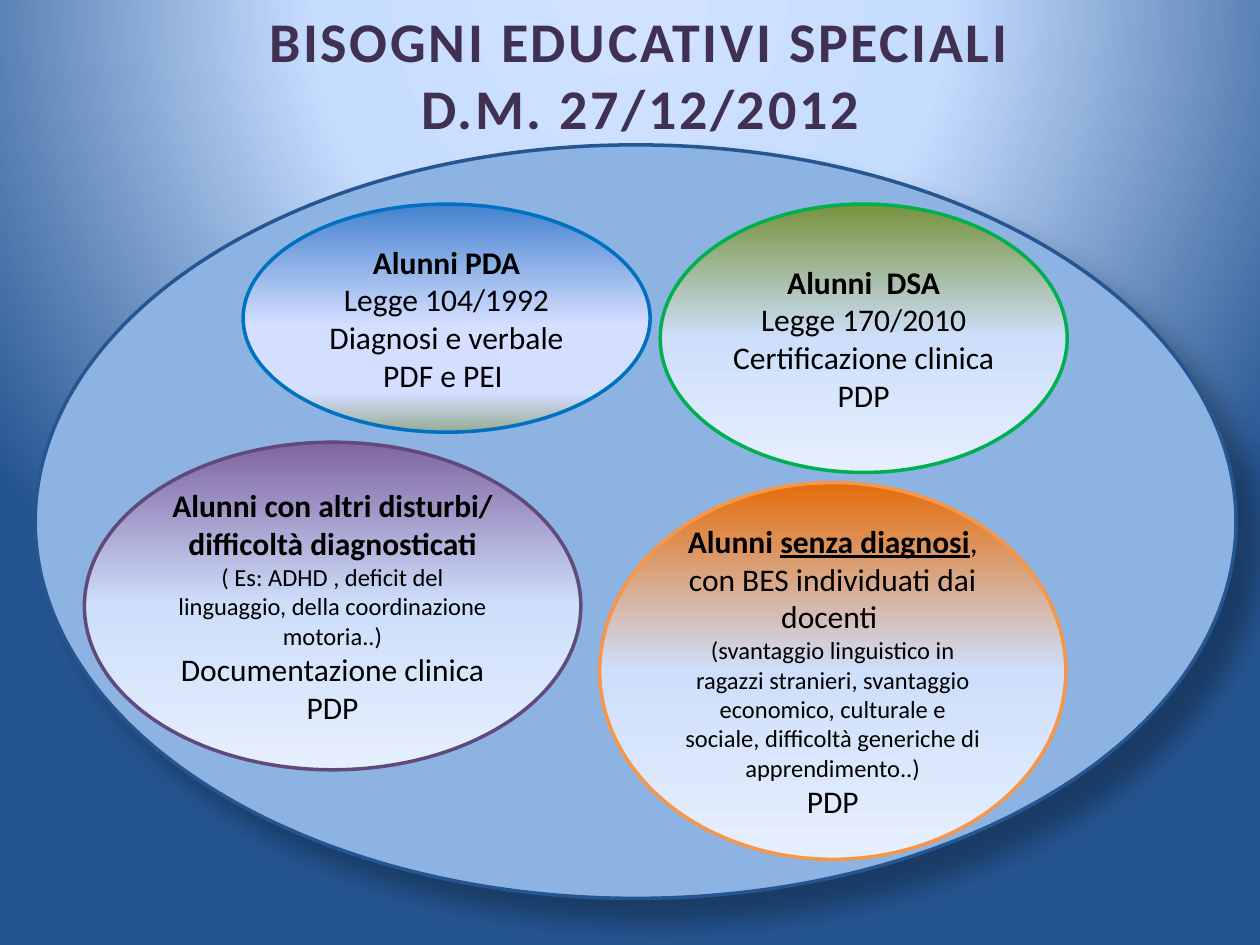
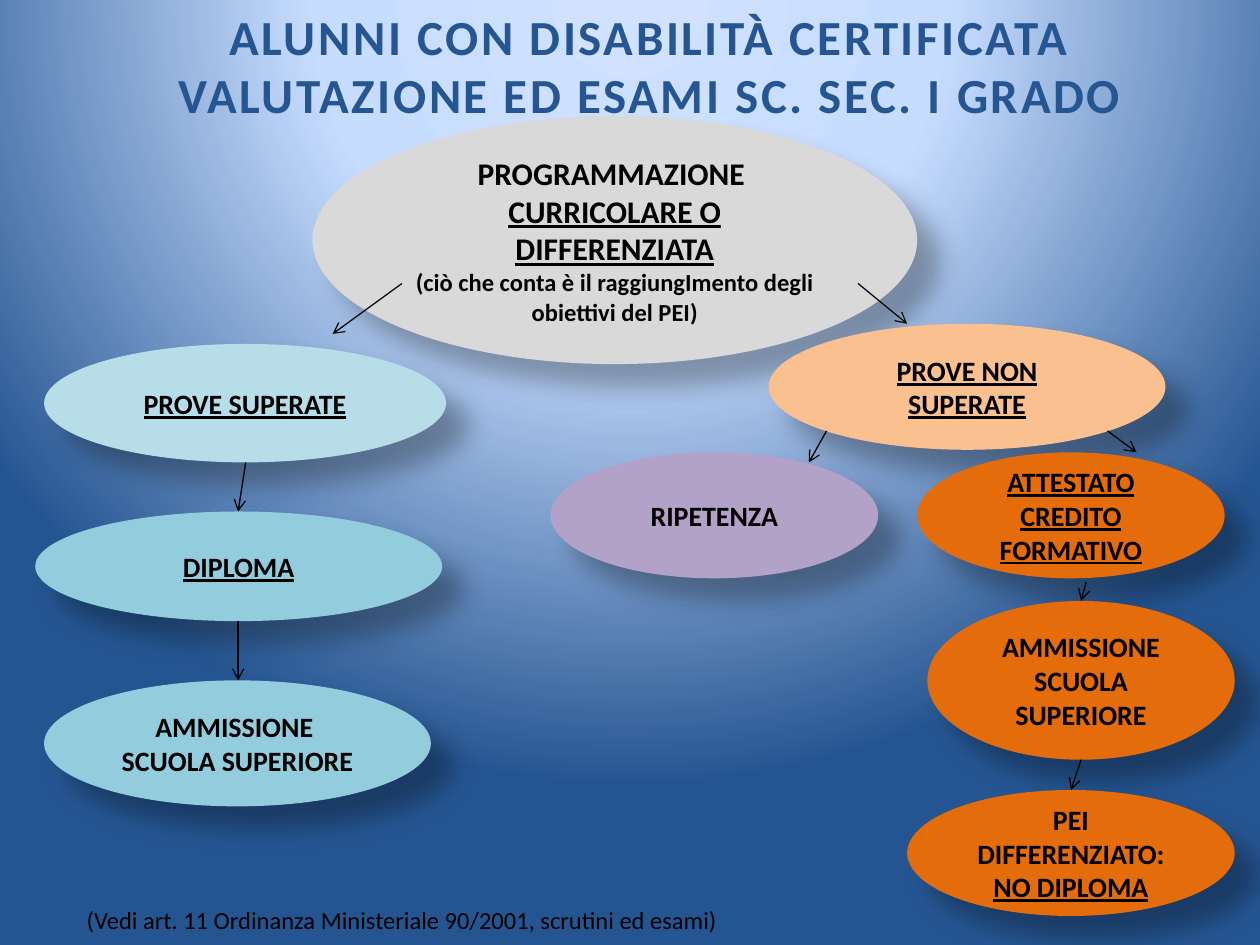
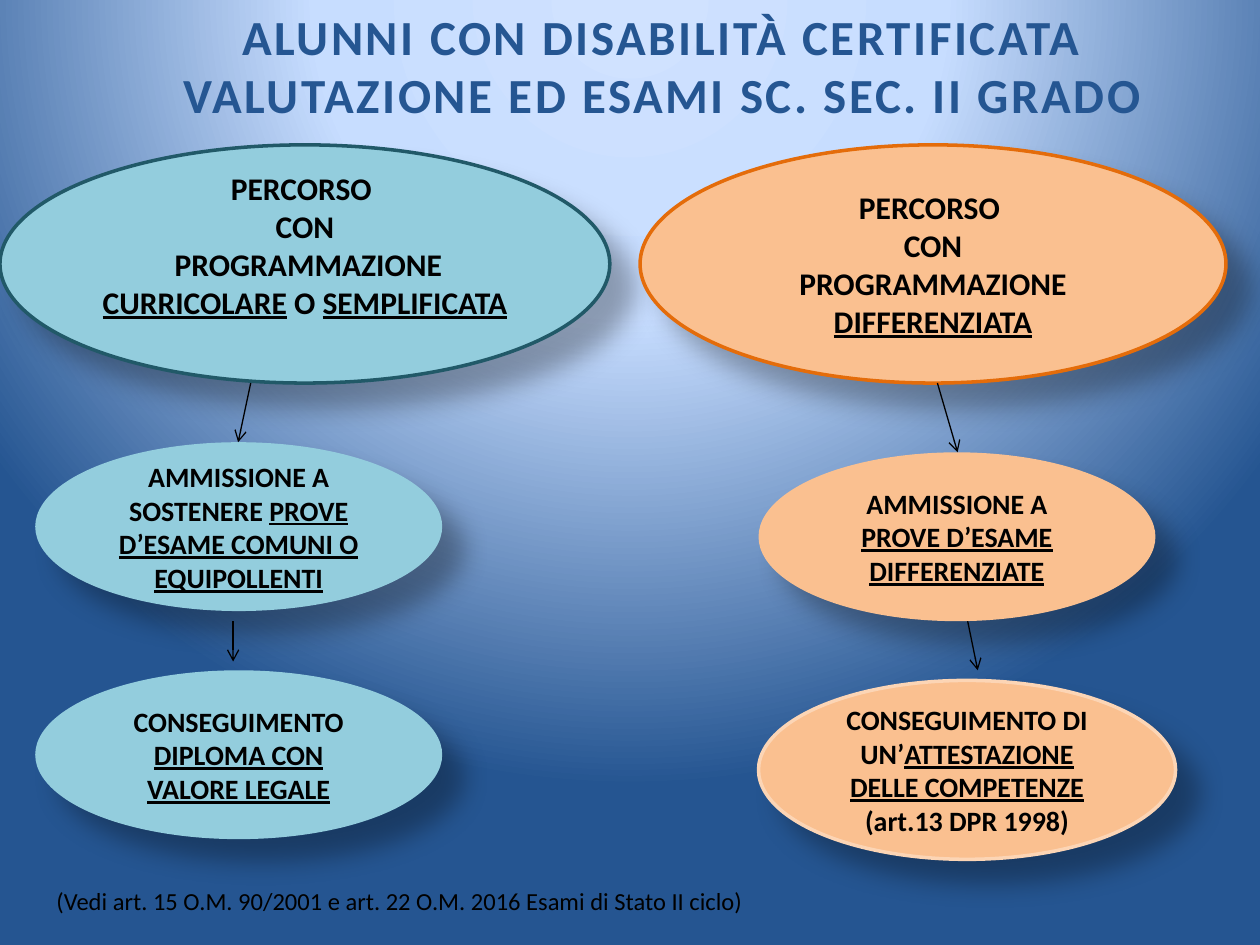
from dataclasses import dataclass

from lxml import etree
from pptx import Presentation
from pptx import util as u
from pptx.dml.color import RGBColor
from pptx.enum import shapes, text
from pptx.oxml import ns

FONT = "Calibri"
BLACK, NAVY, PLUM = "000000", "255692", "403152"
AQUA, PALE_AQUA, PEACH, ORANGE = "93CDDD", "B7DEE8", "FAC090", "E46C0A"
BACKDROP = [(0, "D0E2FF"), (40, "C7DDFF"), (100, "255591")]


@dataclass
class Oval:
    box: tuple          # left, top, width, height inside its region
    fill: object        # a colour, or a list of gradient stops
    paras: list         # (size, [(wording, marks), ...]); b is bold, u underlined
    line: str = None
    shadow: bool = True
    bottom: float = 0.05


def color(value):
    return RGBColor.from_string(value)


def child(parent, tag, **attributes):
    return etree.SubElement(parent, ns.qn(tag), attributes)


def fade(top):
    return [(0, top), (50, "CEDFFB"), (100, "E6EFFD")]


# Shared formatting
def set_gradient(fill, owner, stops, circle=False):
    fill.gradient()
    gradient = next(owner.iter(ns.qn("a:gradFill")))
    for part in list(gradient):
        gradient.remove(part)
    stop_list = child(gradient, "a:gsLst")
    for position, value in stops:
        stop = child(stop_list, "a:gs", pos=str(position * 1000))
        child(stop, "a:srgbClr", val=value)
    if circle:
        shade = child(gradient, "a:path", path="circle")
        child(shade, "a:fillToRect", l="50000", t="-80000", r="50000", b="180000")
    else:
        child(gradient, "a:lin", ang="5400000", scaled="0")


def add_shadow(shape):
    effects = shape._element.spPr.find(ns.qn("a:effectLst"))
    outer = child(effects, "a:outerShdw", blurRad=str(u.Pt(15)), dist=str(u.Pt(18)),
                  dir="2700000", algn="tl", rotWithShape="0")
    shade = child(outer, "a:srgbClr", val=BLACK)
    child(shade, "a:alpha", val="30000")


def add_span(para, wording, size, ink=BLACK, marks=""):
    span = para.add_run()
    span.text = wording
    span.font.name = FONT
    span.font.size = u.Pt(size)
    span.font.bold = "b" in marks
    span.font.underline = "u" in marks
    span.font.color.rgb = color(ink)
    return span


def add_title(page, box, lines, size=28, ink=NAVY):
    frame = page.shapes.add_textbox(*map(u.Inches, box)).text_frame
    frame.word_wrap = False
    para = frame.paragraphs[0]
    para.alignment = text.PP_ALIGN.CENTER
    for index, line in enumerate(lines):
        if index:
            para.add_line_break()
        span = add_span(para, line, size, ink, "b")
        span.font._element.set("spc", "150")


def add_note(page, box, wording):
    frame = page.shapes.add_textbox(*map(u.Inches, box)).text_frame
    frame.word_wrap = True
    add_span(frame.paragraphs[0], wording, 14)


def add_oval(page, origin, oval):
    left, top, width, height = oval.box
    shape = page.shapes.add_shape(
        shapes.MSO_SHAPE.OVAL, u.Inches(origin[0] + left), u.Inches(origin[1] + top),
        u.Inches(width), u.Inches(height))
    if isinstance(oval.fill, str):
        shape.fill.solid()
        shape.fill.fore_color.rgb = color(oval.fill)
    else:
        set_gradient(shape.fill, shape._element.spPr, oval.fill)
    if oval.line:
        shape.line.color.rgb = color(oval.line)
        shape.line.width = u.Pt(2)
    else:
        shape.line.fill.background()
    shape.shadow.inherit = False
    if oval.shadow:
        add_shadow(shape)
    frame = shape.text_frame
    frame.word_wrap = True
    frame.vertical_anchor = text.MSO_ANCHOR.MIDDLE
    frame.margin_bottom = u.Inches(oval.bottom)
    for index, (size, spans) in enumerate(oval.paras):
        para = frame.add_paragraph() if index else frame.paragraphs[0]
        para.alignment = text.PP_ALIGN.CENTER
        for wording, marks in spans:
            add_span(para, wording, size, marks=marks)


def add_arrow(page, origin, ends, ink=BLACK):
    x, y = origin
    x1, y1, x2, y2 = ends
    arrow = page.shapes.add_connector(
        shapes.MSO_CONNECTOR.STRAIGHT,
        *map(u.Inches, (x + x1, y + y1, x + x2, y + y2)))
    arrow.line.color.rgb = color(ink)
    arrow.line.width = u.Pt(0.75)
    child(arrow.line._get_or_add_ln(), "a:tailEnd", type="arrow")
    child(arrow._element.spPr, "a:effectLst")


# A region of ovals and the arrows that join them
def add_region(page, origin, ovals, arrows=(), ink=BLACK):
    for oval in ovals:
        add_oval(page, origin, oval)
    for ends in arrows:
        add_arrow(page, origin, ends, ink)


# Special educational needs: four groups inside one large oval
def needs_slide(page):
    pda_fill = [(0, "4482CF"), (53, "D4DEFF"), (83, "D4DEFF"), (100, "96AB94")]
    add_region(page, (0.28, 1.15), [
        Oval((0, 0, 9.53, 5.98), "8DB3E2", [], NAVY),
        Oval((1.65, 0.47, 3.23, 1.81), pda_fill, [
            (18, [("Alunni PDA", "b")]),
            (18, [("Legge 104/1992", "")]),
            (18, [("Diagnosi e verbale", "")]),
            (18, [("PDF e PEI ", "")])], "0070C0", False),
        Oval((4.96, 0.47, 3.23, 2.13), fade("77933C"), [
            (18, [("Alunni  DSA", "b")]),
            (18, [("Legge 170/2010", "")]),
            (18, [("Certificazione clinica", "")]),
            (18, [("PDP", "")])], "00B050", False),
        Oval((0.39, 2.36, 3.94, 2.6), fade("8064A2"), [
            (18, [("Alunni con altri disturbi/ difficoltà diagnosticati", "b")]),
            (14, [("( Es: ADHD , deficit del linguaggio, della coordinazione "
                   "motoria..)", "")]),
            (18, [("Documentazione clinica", "")]),
            (18, [("PDP", "")])], "604A7B", False),
        Oval((4.48, 2.68, 3.7, 2.99), fade(ORANGE), [
            (18, [("Alunni ", "b"), ("senza diagnosi", "bu"),
                  (", con BES individuati dai docenti ", "")]),
            (14, [("(svantaggio linguistico in ragazzi stranieri, svantaggio "
                   "economico, culturale e sociale, difficoltà generiche di "
                   "apprendimento..)", "")]),
            (18, [("PDP", "")])], "F79646", False),
    ])
    add_title(page, (2.01, 0, 6.14, 1.18),
              ["BISOGNI EDUCATIVI SPECIALI", "D.M. 27/12/2012"], 32, PLUM)


# Lower secondary school: one programme, tests passed or failed
def lower_school_slide(page):
    programme = [Oval((0, 0, 4.8, 1.97), "D9D9D9", [
        (18, [("PROGRAMMAZIONE ", "b")]),
        (18, [("CURRICOLARE O DIFFERENZIATA", "bu")]),
        (14, [("(ciò che conta è il raggiungImento degli obiettivi del PEI)", "b")])])]
    passed = [
        Oval((0.07, 0, 3.19, 0.94), PALE_AQUA, [(16, [("PROVE SUPERATE", "bu")])]),
        Oval((0, 1.33, 3.23, 0.87), AQUA, [(16, [("DIPLOMA", "bu")])]),
        Oval((0.07, 2.67, 3.07, 1), AQUA, [
            (16, [("AMMISSIONE ", "b")]), (16, [("SCUOLA SUPERIORE", "b")])])]
    failed = [
        Oval((1.73, 0, 3.15, 1), PEACH, [(16, [("PROVE NON SUPERATE", "bu")])]),
        Oval((0, 1.02, 2.6, 1), "B3A2C7", [(16, [("RIPETENZA", "b")])]),
        Oval((2.91, 1.02, 2.44, 1), ORANGE,
             [(16, [("ATTESTATO CREDITO FORMATIVO", "bu")])]),
        Oval((2.99, 2.2, 2.44, 1.26), ORANGE,
             [(16, [("AMMISSIONE SCUOLA SUPERIORE", "b")])]),
        Oval((2.83, 3.7, 2.6, 1), ORANGE, [
            (16, [("PEI DIFFERENZIATO:", "b")]), (16, [("NO DIPLOMA", "bu")])])]
    add_region(page, (2.48, 0.92), programme,
               [(0.71, 1.33, 0.16, 1.73), (4.33, 1.33, 4.72, 1.65)], "0D0D0D")
    add_region(page, (0.28, 2.73), passed,
               [(1.67, 0.94, 1.61, 1.33), (1.61, 2.2, 1.61, 2.67)])
    add_region(page, (4.37, 2.57), failed,
               [(2.19, 0.85, 2.05, 1.1), (4.42, 0.85, 4.65, 1.02),
                (4.25, 2.05, 4.21, 2.2), (4.21, 3.46, 4.13, 3.7)])
    add_title(page, (0.83, 0, 8.66, 1.04),
              ["ALUNNI CON DISABILITÀ CERTIFICATA",
               "VALUTAZIONE ED ESAMI SC. SEC. I GRADO"])
    add_note(page, (0.59, 7.13, 6.46, 0.34),
             "(Vedi art. 11 Ordinanza Ministeriale 90/2001, scrutini ed esami)")


# Upper secondary school: two parallel paths
def upper_school_slide(page):
    standard = [
        Oval((0, 0, 4.84, 1.89), AQUA, [
            (18, [("PERCORSO ", "b")]),
            (18, [("CON", "b")]),
            (18, [(" PROGRAMMAZIONE ", "b"), ("CURRICOLARE", "bu"), (" O ", "b"),
                  ("SEMPLIFICATA ", "bu")])], "215968", bottom=0.35),
        Oval((0.28, 2.36, 3.23, 1.34), AQUA, [
            (16, [("AMMISSIONE A SOSTENERE ", "b"),
                  ("PROVE D’ESAME COMUNI O EQUIPOLLENTI", "bu")])]),
        Oval((0.28, 4.17, 3.23, 1.34), AQUA, [
            (16, [("CONSEGUIMENTO ", "b"), ("DIPLOMA CON VALORE LEGALE", "bu")])])]
    differentiated = [
        Oval((0, 0, 4.65, 1.89), PEACH, [
            (18, [("PERCORSO ", "b")]),
            (18, [("CON", "b")]),
            (18, [("PROGRAMMAZIONE ", "b"), ("DIFFERENZIATA", "bu")])], ORANGE),
        Oval((0.94, 2.44, 3.15, 1.34), PEACH, [
            (16, [("AMMISSIONE A ", "b"), ("PROVE D’ESAME DIFFERENZIATE", "bu")])]),
        Oval((0.94, 4.25, 3.31, 1.42), PEACH, [
            (16, [("CONSEGUIMENTO DI UN’", "b"),
                  ("ATTESTAZIONE DELLE COMPETENZE", "bu")]),
            (16, [("(art.13 DPR 1998)", "b")])], "FCD5B5")]
    add_region(page, (0, 1.15), standard,
               [(1.99, 1.89, 1.89, 2.36), (1.85, 3.78, 1.85, 4.1)])
    add_region(page, (5.08, 1.15), differentiated,
               [(2.36, 1.89, 2.52, 2.44), (2.6, 3.78, 2.68, 4.17)])
    add_title(page, (1.3, 0, 7.92, 1.04),
              ["ALUNNI CON DISABILITÀ CERTIFICATA",
               "VALUTAZIONE ED ESAMI SC. SEC. II GRADO"])
    add_note(page, (0.35, 6.98, 7.17, 0.34),
             "(Vedi art. 15 O.M. 90/2001 e art. 22 O.M. 2016 Esami di Stato II ciclo)")


def main():
    deck = Presentation()
    deck.slide_width, deck.slide_height = u.Inches(10), u.Inches(7.5)
    for build in (needs_slide, lower_school_slide, upper_school_slide):
        page = deck.slides.add_slide(deck.slide_layouts[6])
        set_gradient(page.background.fill, page._element, BACKDROP, circle=True)
        build(page)
    deck.save("out.pptx")


if __name__ == "__main__":
    main()
